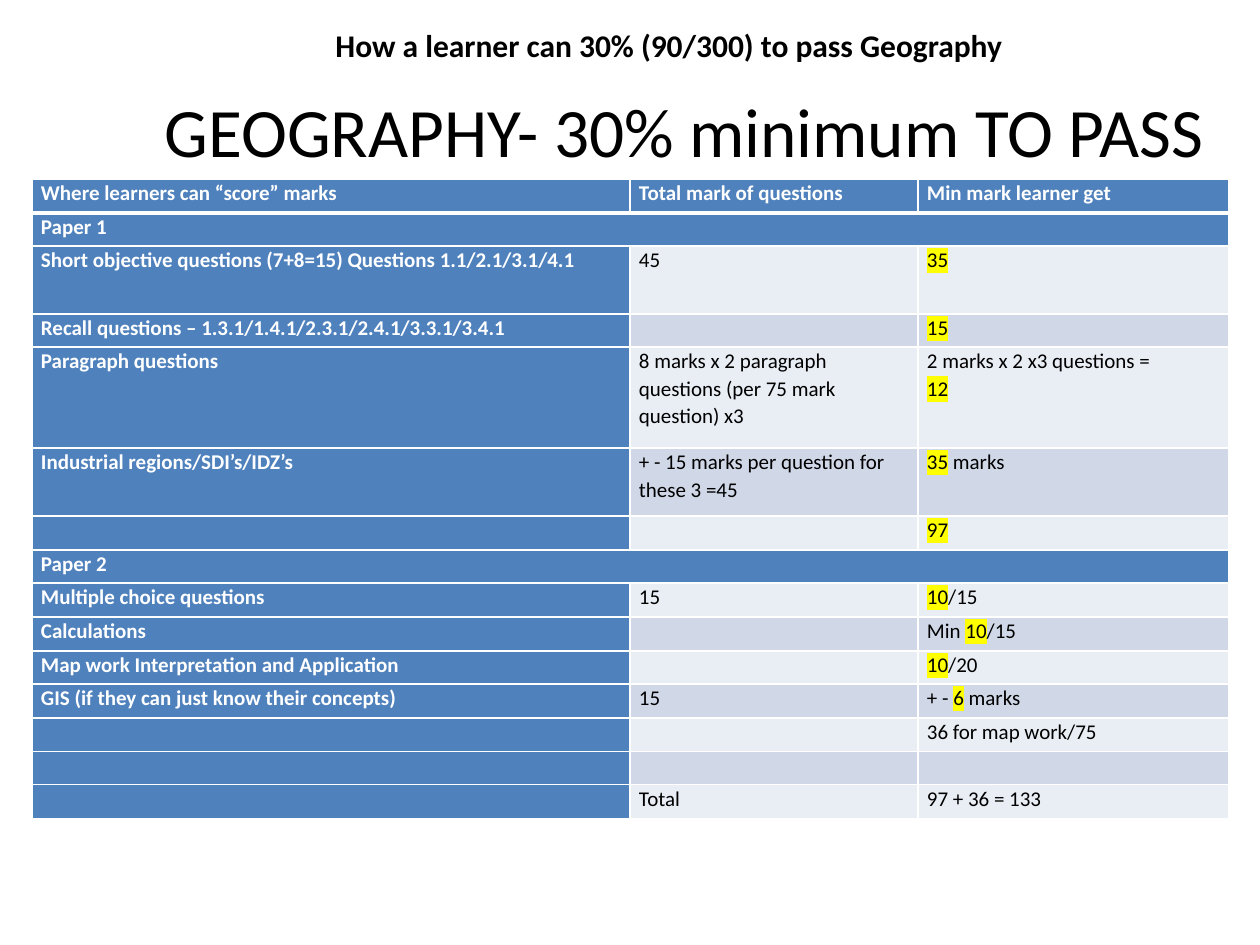
from dataclasses import dataclass
from itertools import accumulate

from lxml.etree import SubElement
from pptx import Presentation
from pptx.dml.color import RGBColor
from pptx.enum.text import MSO_ANCHOR, MSO_AUTO_SIZE, PP_ALIGN
from pptx.oxml.ns import qn
from pptx.util import Pt

EMU_PER_PX = 7257.6


@dataclass(frozen=True)
class Theme:
    """Colours and type sizes of the slide."""

    font: str = "Calibri"
    ink: str = "000000"
    white: str = "FFFFFF"
    accent: str = "4F81BD"
    bands: tuple = ("E9EDF4", "D0D8E8")
    highlight: str = "FFFF00"
    title_size: float = 39.6
    heading_size: float = 18
    table_size: float = 12


THEME = Theme()

ROWS = [
    (1, "Where learners can “score” marks", "Total mark of questions", "Min mark learner get"),
    (1, "Paper 1"),
    (2, "Short objective questions (7+8=15) Questions 1.1/2.1/3.1/4.1", "45", "*35*"),
    (1, "Recall questions – 1.3.1/1.4.1/2.3.1/2.4.1/3.3.1/3.4.1", "", "*15*"),
    (
        3,
        "Paragraph questions",
        "8 marks x 2 paragraph questions (per 75 mark question) x3",
        "2 marks x 2 x3 questions =\n*12*",
    ),
    (2, "Industrial regions/SDI’s/IDZ’s", "+ - 15 marks per question for these 3 =45", "*35* marks"),
    (1, "", "", "*97*"),
    (1, "Paper 2"),
    (1, "Multiple choice questions", "15", "*10*/15"),
    (1, "Calculations", "", "Min *10*/15"),
    (1, "Map work Interpretation and Application", "", "*10*/20"),
    (1, "GIS (if they can just know their concepts)", "15", "+ - *6* marks"),
    (1, "", "", "36 for map work/75"),
    (1, "", "", ""),
    (1, "", "Total", "97 + 36 = 133"),
]


def px(length):
    """Turn pixels into EMU."""
    return round(length * EMU_PER_PX)


def add_highlight(run):
    """Mark a run with the highlight colour."""
    highlight = SubElement(run.font._element, qn("a:highlight"))
    SubElement(highlight, qn("a:srgbClr"), val=THEME.highlight)


def write_text(frame, text, size, color=THEME.ink, bold=False, align=PP_ALIGN.LEFT, spacing=None, indent=0):
    """Write lines of text, highlighting the parts between asterisks."""
    for index, line in enumerate(text.split("\n")):
        paragraph = frame.add_paragraph() if index else frame.paragraphs[0]
        paragraph.alignment = align
        paragraph.line_spacing = spacing
        if indent:
            paragraph._p.get_or_add_pPr().set("marL", str(px(indent)))
        for part, words in enumerate(line.split("*")):
            if not words:
                continue
            run = paragraph.add_run()
            run.text = words
            run.font.size = Pt(size)
            run.font.bold = bold
            run.font.color.rgb = RGBColor.from_string(color)
            if part % 2:
                add_highlight(run)
            run.font.name = THEME.font
        if not line:
            SubElement(paragraph._p, qn("a:endParaRPr"), sz=str(size * 100))


def place(shape, box):
    """Move and size a shape to a pixel box."""
    shape.left, shape.top, shape.width, shape.height = map(px, box)


def add_title(slide, box):
    """Fill the title placeholder."""
    title = slide.shapes.title
    place(title, box)
    frame = title.text_frame
    frame.word_wrap = True
    frame.auto_size = MSO_AUTO_SIZE.NONE
    frame.vertical_anchor = MSO_ANCHOR.MIDDLE
    write_text(frame, "GEOGRAPHY- 30% minimum TO PASS", THEME.title_size, align=PP_ALIGN.CENTER)


def add_heading(slide, box):
    """Add the indented heading above the title."""
    heading = slide.shapes.add_textbox(*map(px, box))
    frame = heading.text_frame
    frame.word_wrap = True
    frame.auto_size = MSO_AUTO_SIZE.SHAPE_TO_FIT_TEXT
    frame.vertical_anchor = MSO_ANCHOR.MIDDLE
    text = "How a learner can 30% (90/300) to pass Geography"
    write_text(frame, text, THEME.heading_size, bold=True, indent=291)


def format_cell(cell, fill, row):
    """Set margins, borders and fill of a cell."""
    cell.margin_left = cell.margin_right = px(9)
    cell.margin_top = cell.margin_bottom = 0
    properties = cell._tc.get_or_add_tcPr()
    for side in "LRTB":
        thick = (row, side) in ((0, "B"), (1, "T"))
        border = SubElement(properties, qn(f"a:ln{side}"), w=str(Pt(3 if thick else 1)))
        solid = SubElement(border, qn("a:solidFill"))
        SubElement(solid, qn("a:srgbClr"), val=THEME.white)
    cell.fill.solid()
    cell.fill.fore_color.rgb = RGBColor.from_string(fill)


def add_marks_table(slide, box):
    """Add the table of marks, with row heights in shares of the box."""
    widths = (598, 288, 311)
    table = slide.shapes.add_table(len(ROWS), len(widths), *map(px, box)).table
    for column, width in zip(table.columns, widths):
        column.width = px(width)
    shares = [row[0] for row in ROWS]
    edges = [0] + [round(box[3] * end / sum(shares)) for end in accumulate(shares)]
    for index, (_, *texts) in enumerate(ROWS):
        table.rows[index].height = px(edges[index + 1] - edges[index])
        is_section = len(texts) == 1
        for column in range(len(widths)):
            cell = table.cell(index, column)
            strong = index == 0 or column == 0 or is_section
            format_cell(cell, THEME.accent if strong else THEME.bands[index % 2], index)
            write_text(
                cell.text_frame,
                texts[column] if column < len(texts) else "",
                THEME.table_size,
                color=THEME.white if strong else THEME.ink,
                bold=strong,
                spacing=1.07,
            )
        if is_section:
            table.cell(index, 0).merge(table.cell(index, len(widths) - 1))


def main():
    """Build and save the slide."""
    presentation = Presentation()
    presentation.slide_width, presentation.slide_height = px(1260), px(945)
    slide = presentation.slides.add_slide(presentation.slide_layouts[5])
    add_title(slide, (125, 115, 1119, 29))
    add_marks_table(slide, (32, 179, 1197, 640))
    add_heading(slide, (32, 19, 1104, 51))
    presentation.save("out.pptx")


if __name__ == "__main__":
    main()
